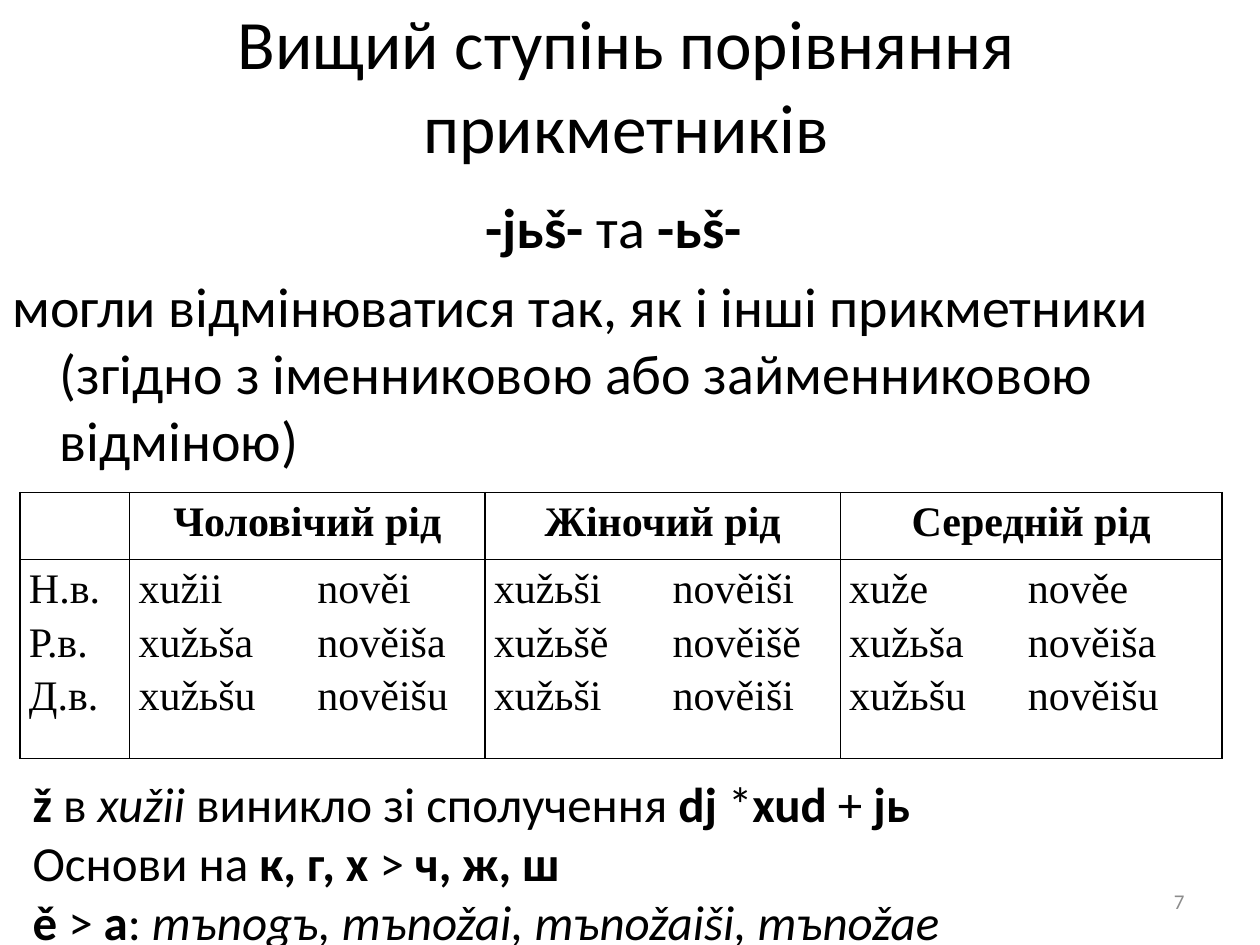
from lxml import etree
from pptx import Presentation
from pptx.dml.color import RGBColor
from pptx.enum.text import MSO_ANCHOR, MSO_AUTO_SIZE, PP_ALIGN
from pptx.oxml.ns import qn
from pptx.util import Inches, Pt

LEFT, CENTER, RIGHT, JUST = PP_ALIGN.LEFT, PP_ALIGN.CENTER, PP_ALIGN.RIGHT, PP_ALIGN.JUSTIFY
MIDDLE = MSO_ANCHOR.MIDDLE
NO_FIT = MSO_AUTO_SIZE.NONE
BLACK, GRAY = "000000", "8C8C8C"
SANS, SERIF = "Calibri", "Times New Roman"


def place(shape, left, top, width, height):
    shape.left, shape.top = Inches(left), Inches(top)
    shape.width, shape.height = Inches(width), Inches(height)


def write(frame, lines, size, align, font=SANS, color=BLACK):
    """Fill a frame; each line is a list of (text, style), style b or i."""
    for n, line in enumerate(lines):
        para = frame.add_paragraph() if n else frame.paragraphs[0]
        para.alignment = align
        for text, style in line:
            run = para.add_run()
            run.text = text
            run.font.name, run.font.size = font, Pt(size)
            run.font.bold, run.font.italic = style == "b", style == "i"
            run.font.color.rgb = RGBColor.from_string(color)


deck = Presentation()
deck.slide_width, deck.slide_height = Inches(10), Inches(7.5)
slide = deck.slides.add_slide(deck.slide_layouts[1])

# Title
title = slide.shapes.title
place(title, 0.47, 0.23, 9, 0.87)
title.text_frame.auto_size = NO_FIT
title.text_frame.vertical_anchor = MIDDLE
write(title.text_frame, [[("Вищий ступінь порівняння прикметників", "")]], 39.6, CENTER)

# Suffixes and rule, without bullets
body = slide.placeholders[1]
place(body, 0, 1.48, 9.84, 2.47)
body.text_frame.auto_size = NO_FIT
write(body.text_frame, [
    [("-jьš-", "b"), (" та ", ""), ("-ьš- ", "b")],
    [("могли відмінюватися так, як і інші прикметники "
      "(згідно з іменниковою або займенниковою відміною)", "")],
], 32, LEFT)
body.text_frame.paragraphs[0].alignment = CENTER
for para in body.text_frame.paragraphs:
    etree.SubElement(para._p.get_or_add_pPr(), qn("a:buNone"))

# Declension table: a tab parts the two forms on each line
rows = [
    ["", "Чоловічий рід", "Жіночий рід", "Середній рід"],
    ["Н.в.\nР.в.\nД.в.",
     "xužii\tnověi\nxužьša\tnověiša\nxužьšu\tnověišu",
     "xužьši\tnověiši\nxužьšě\tnověišě\nxužьši\tnověiši",
     "xuže\tnověe\nxužьša\tnověiša\nxužьšu\tnověišu"],
]
table = slide.shapes.add_table(2, 4, Inches(0.16), Inches(3.91), Inches(9.53), Inches(2.11)).table
for col, width in zip(table.columns, [0.87, 2.82, 2.82, 3.03]):
    col.width = Inches(width)
for row, height in zip(table.rows, [0.53, 1.58]):
    row.height = Inches(height)
for r, texts in enumerate(rows):
    for c, text in enumerate(texts):
        cell = table.cell(r, c)
        cell.fill.background()
        cell.margin_left = cell.margin_right = Inches(0.07)
        cell.margin_top = cell.margin_bottom = 0
        if text:
            lines = [[(line, "" if r else "b")] for line in text.split("\n")]
            write(cell.text_frame, lines, 24, JUST if r else CENTER, SERIF)
        for para in cell.text_frame.paragraphs:
            para.line_spacing = 1.15
            if r and c:
                tabs = etree.SubElement(para._p.get_or_add_pPr(), qn("a:tabLst"))
                etree.SubElement(tabs, qn("a:tab"), pos=str(Inches(1.42)), algn="l")
        props = cell._tc.get_or_add_tcPr()
        for n, side in enumerate(["lnL", "lnR", "lnT", "lnB"]):
            edge = etree.Element(qn("a:" + side), w=str(Pt(1)))
            fill = etree.SubElement(edge, qn("a:solidFill"))
            etree.SubElement(fill, qn("a:srgbClr"), val=BLACK)
            props.insert(n, edge)

# Notes on sound changes
notes = slide.shapes.add_textbox(Inches(0.16), Inches(6.09), Inches(7.48), Inches(1.51))
notes.text_frame.word_wrap = False
write(notes.text_frame, [
    [("ž", "b"), (" в ", ""), ("xužii", "i"), (" виникло зі сполучення ", ""),
     ("dj", "b"), (" *", ""), ("xud", "b"), (" + ", ""), ("jь", "b")],
    [("Основи на ", ""), ("к, г, х ", "b"), ("> ", ""), ("ч, ж, ш", "b")],
    [("ě ", "b"), ("> ", ""), ("а", "b"), (": ", ""),
     ("mъnogъ, mъnožai, mъnožaiši, mъnožae", "i")],
], 28, LEFT)

# Page number
page = slide.shapes.add_textbox(Inches(7.17), Inches(6.95), Inches(2.33), Inches(0.4))
page.text_frame.word_wrap = True
page.text_frame.vertical_anchor = MIDDLE
write(page.text_frame, [[("7", "")]], 12, RIGHT, color=GRAY)

deck.save("out.pptx")
